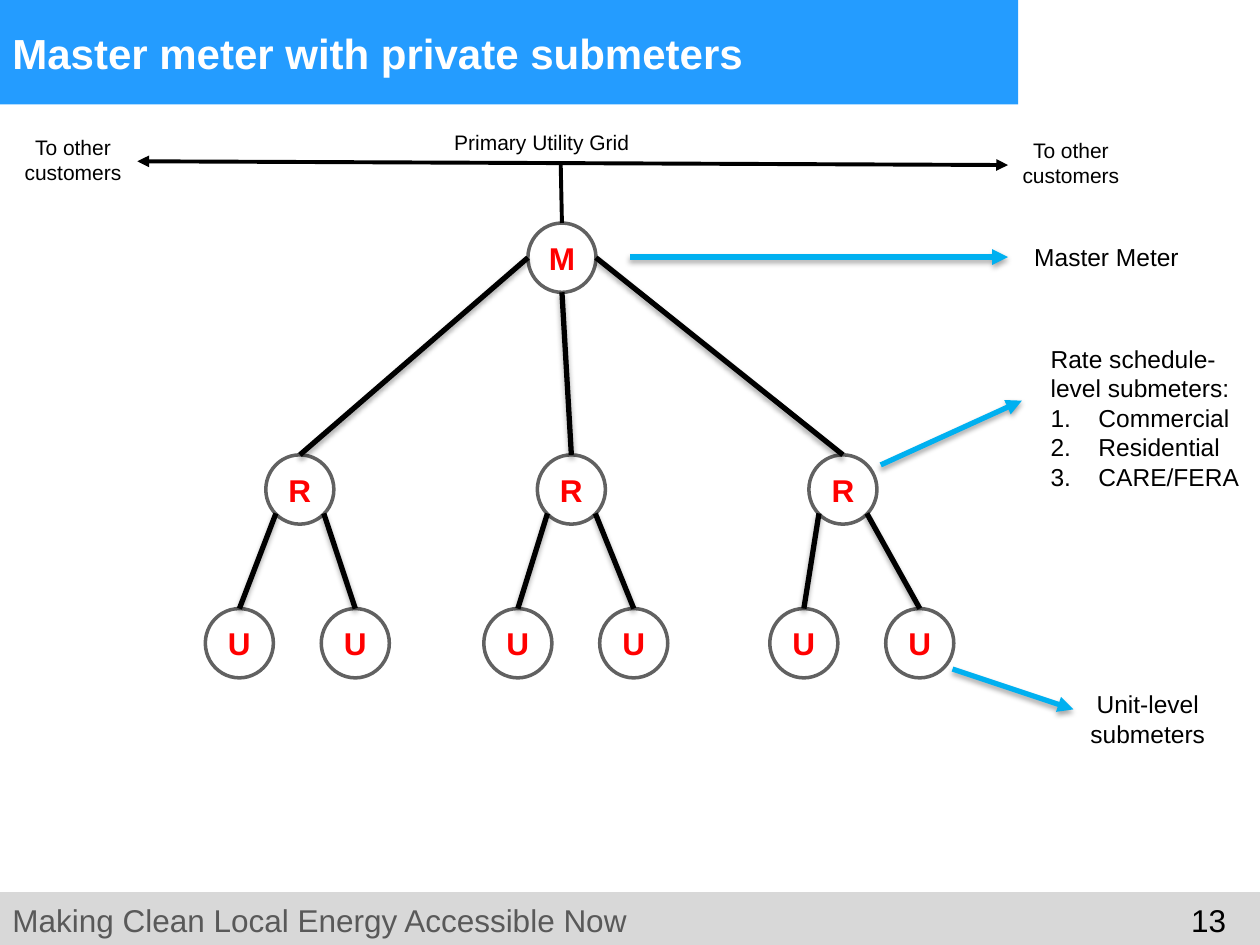
from lxml.etree import SubElement
from pptx import Presentation
from pptx.dml.color import RGBColor
from pptx.enum.shapes import MSO_CONNECTOR as CONN, MSO_SHAPE as SHAPE
from pptx.enum.text import MSO_ANCHOR as ANCHOR, PP_ALIGN as ALIGN
from pptx.oxml.ns import qn
from pptx.util import Inches, Pt

COLORS = {
    "header": "249CFF", "footer": "D8D8D8", "tagline": "595959",
    "white": "FFFFFF", "black": "000000", "ring": "616161",
    "letter": "FF0000", "pointer": "00B0F0",
}


def rgb(name):
    """Return the named colour."""
    return RGBColor.from_string(COLORS[name])


def add_paragraph(p, text, size, color="black", bold=False, align=ALIGN.LEFT):
    """Fill a paragraph with one styled run."""
    p.alignment = align
    r = p.add_run()
    r.text = text
    r.font.name, r.font.size, r.font.bold = "Arial", Pt(size), bold
    r.font.color.rgb = rgb(color)


def add_text(s, x, y, w, h, text, size, anchor=ANCHOR.TOP, **style):
    """Add a wrapped text box and return its text frame."""
    tf = s.shapes.add_textbox(Inches(x), Inches(y), Inches(w), Inches(h)).text_frame
    tf.word_wrap, tf.vertical_anchor = True, anchor
    add_paragraph(tf.paragraphs[0], text, size, **style)
    return tf


def add_bar(s, x, y, w, h, color):
    """Add a plain filled rectangle."""
    sp = s.shapes.add_shape(SHAPE.RECTANGLE, Inches(x), Inches(y), Inches(w), Inches(h))
    sp.shadow.inherit = False
    sp.fill.solid()
    sp.fill.fore_color.rgb = rgb(color)
    sp.line.fill.background()


def add_line(s, start, end, color="black", width=3.0, arrows=(), shadow=True):
    """Add a straight line with optional arrowheads and a soft shadow."""
    ends = [Inches(v) for v in (*start, *end)]
    line = s.shapes.add_connector(CONN.STRAIGHT, *ends)
    line.line.color.rgb, line.line.width = rgb(color), Pt(width)
    ln = line.line._get_or_add_ln()
    for arrow in arrows:
        SubElement(ln, qn(f"a:{arrow}"), type="triangle")
    effects = SubElement(line._element.spPr, qn("a:effectLst"))
    if shadow:
        shade = SubElement(effects, qn("a:outerShdw"), blurRad=str(Pt(3.1)),
                           dist=str(Pt(1.8)), dir="5400000", rotWithShape="0")
        clr = SubElement(shade, qn("a:srgbClr"), val=COLORS["black"])
        SubElement(clr, qn("a:alpha"), val="35000")


def add_meter(s, x, y, w, h, letter):
    """Add a circled meter letter."""
    sp = s.shapes.add_shape(SHAPE.OVAL, Inches(x), Inches(y), Inches(w), Inches(h))
    sp.shadow.inherit = False
    sp.fill.solid()
    sp.fill.fore_color.rgb = rgb("white")
    sp.line.color.rgb, sp.line.width = rgb("ring"), Pt(2)
    tf = sp.text_frame
    tf.margin_left = tf.margin_right = 0
    tf.vertical_anchor = ANCHOR.MIDDLE
    add_paragraph(tf.paragraphs[0], letter, 18, "letter", True, ALIGN.CENTER)


def add_header(s, x, y, w, h):
    """Draw the title bar."""
    add_bar(s, x, y, w, h, "header")
    add_text(s, x, y, w - 0.08, h, "Master meter with private submeters", 24,
             ANCHOR.MIDDLE, color="white", bold=True)


def add_footer(s, x, y, w, h):
    """Draw the footer bar with tagline and page number."""
    add_bar(s, x, y, w, h, "footer")
    add_text(s, x + w - 0.89, y + 0.02, 0.72, 0.4, "13", 18, align=ALIGN.RIGHT)
    add_text(s, x, y + 0.02, w - 0.89, 0.4, "Making Clean Local Energy Accessible Now",
             18, color="tagline")


def add_grid_line(s, x, y, w, h):
    """Draw the utility grid line, its labels and the drop to the master meter."""
    add_line(s, (x + 1.01, y + 0.3), (x + 7.92, y + 0.33), width=2.25,
             arrows=("headEnd", "tailEnd"), shadow=False)
    add_line(s, (x + 4.37, y + 0.32), (x + 4.38, y + h), width=2.25, shadow=False)
    add_text(s, x + 3.3, y, 1.84, 0.3, "Primary Utility Grid", 12, align=ALIGN.CENTER)
    for left, top in ((x, y + 0.04), (x + w - 1, y + 0.06)):
        add_text(s, left, top, 1, 0.5, "To other customers", 12, align=ALIGN.CENTER)


def add_meter_tree(s, x, y, w, h):
    """Draw the master meter, its rate submeters and their unit submeters."""
    mw, mh, diagonal = 0.54, 0.55, 0.19
    master = x + 2.56
    rate_y, unit_y = y + 1.84, y + h - mh
    rates = [x + 0.48 + 2.155 * i for i in range(3)]
    pairs = [(x + left, x + left + 0.92) for left in (0, 2.21, 4.48)]
    add_meter(s, master, y, mw, mh, "M")
    for rate, pair in zip(rates, pairs):
        add_meter(s, rate, rate_y, mw, mh, "R")
        for unit in pair:
            add_meter(s, unit, unit_y, mw, mh, "U")
    sides = ((0, mh / 2), (mw / 2, mh), (mw, mh / 2))
    for rate, pair, (dx, dy) in zip(rates, pairs, sides):
        center = rate + mw / 2
        add_line(s, (center, rate_y), (master + dx, y + dy))
        for unit, side in zip(pair, (-diagonal, diagonal)):
            add_line(s, (unit + mw / 2, unit_y),
                     (center + side, rate_y + mh / 2 + diagonal))


def add_callouts(s, x, y, w, h):
    """Draw the arrows and notes that explain each meter level."""
    pointers = (((0, 0.17), (3, 0.17)), ((1.99, 1.82), (3.11, 1.31)),
                ((2.56, 3.44), (3.52, 3.76)))
    for (x1, y1), (x2, y2) in pointers:
        add_line(s, (x + x1, y + y1), (x + x2, y + y2), "pointer", arrows=("tailEnd",))
    add_text(s, x + 3.11, y, 1.8, 0.34, "Master Meter", 14)
    tf = add_text(s, x + 3.24, y + 0.81, w - 3.24, 1.75,
                  "Rate schedule-level submeters:", 14)
    for kind in ("Commercial", "Residential", "CARE/FERA"):
        p = tf.add_paragraph()
        pPr = p._p.get_or_add_pPr()
        pPr.set("marL", str(Inches(0.38)))
        pPr.set("indent", str(Inches(-0.38)))
        SubElement(pPr, qn("a:buFont"), typeface="+mj-lt")
        SubElement(pPr, qn("a:buAutoNum"), type="arabicPeriod")
        add_paragraph(p, kind, 14)
    add_text(s, x + 3.31, y + h - 0.57, 1.6, 0.57, "Unit-level submeters", 14,
             align=ALIGN.CENTER)


def main():
    """Build the slide and save it."""
    prs = Presentation()
    prs.slide_width, prs.slide_height = Inches(10), Inches(7.5)
    s = prs.slides.add_slide(prs.slide_layouts[6])
    add_footer(s, 0, 7.08, 10, 0.42)
    add_header(s, 0, 0, 8.08, 0.83)
    add_meter_tree(s, 1.63, 1.77, 5.94, 3.61)
    add_grid_line(s, 0.08, 0.98, 8.92, 0.79)
    add_callouts(s, 5, 1.87, 5, 4.12)
    prs.save("out.pptx")


if __name__ == "__main__":
    main()
